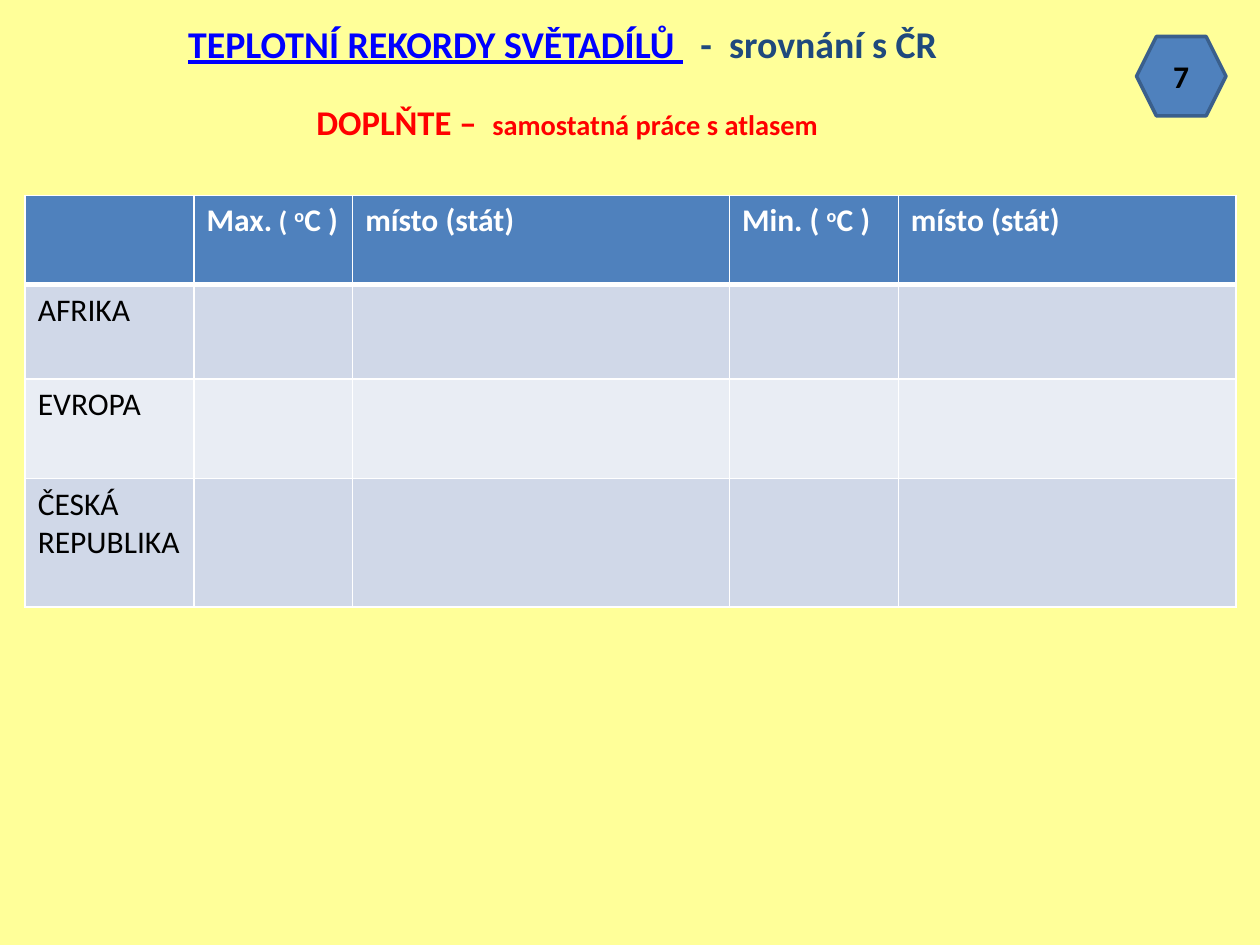
from lxml.etree import SubElement
from pptx import Presentation
from pptx.dml.color import RGBColor
from pptx.enum.shapes import MSO_SHAPE
from pptx.enum.text import MSO_ANCHOR, MSO_AUTO_SIZE, PP_ALIGN
from pptx.oxml import parse_xml
from pptx.oxml.ns import nsdecls, qn
from pptx.util import Inches, Pt

BACKGROUND, BLUE, WHITE, BLACK = "FFFF99", "4F81BD", "FFFFFF", "000000"
BANDS = ["D0D8E8", "E9EDF4"]
TITLE = [
    [("TEPLOTNÍ REKORDY SVĚTADÍLŮ ", 21.6, "0000FF", True),
     (" ", 21.6, "FF0000", False),
     (" -  srovnání s ČR ", 21.6, "1F497D", False)],
    [("DOPLŇTE –", 19.8, "FF0000", False),
     (" ", 39.6, "FF0000", False),
     ("samostatná práce s atlasem", 16.2, "FF0000", False)],
]
HEADERS = [
    [],
    [("Max.", 18, 0), (" (", 16, 0), (" ", 18, 0), ("o", 18, 30), ("C )", 18, 0)],
    [("místo (stát)", 18, 0)],
    [("Min. ( ", 18, 0), ("o", 18, 30), ("C )", 18, 0)],
    [("místo (stát)", 18, 0)],
]
REGIONS = ["AFRIKA", "EVROPA", "ČESKÁ\nREPUBLIKA"]
COLUMN_WIDTHS = [1.34, 1.26, 2.99, 1.34, 2.68]
ROW_HEIGHTS = [0.71, 0.75, 0.79, 1.02]


def paint(fill, color):
    fill.solid()
    fill.fore_color.rgb = RGBColor.from_string(color)


def style(span, size, color, bold=True):
    span.font.name = "Calibri"
    span.font.size = Pt(size)
    span.font.bold = bold
    span.font.color.rgb = RGBColor.from_string(color)


def add_span(para, text, size, color):
    span = para.add_run()
    span.text = text
    style(span, size, color)
    return span


def set_borders(cell, widths):
    properties = cell._tc.get_or_add_tcPr()
    for index, (side, width) in enumerate(widths.items()):
        line = parse_xml(f'<a:ln{side} {nsdecls("a")} w="{Pt(width)}"/>')
        solid = SubElement(line, qn("a:solidFill"))
        SubElement(solid, qn("a:srgbClr"), val=WHITE)
        properties.insert(index, line)


def add_title(page):
    title = page.shapes.title
    title.left, title.top = Inches(0), Inches(0.21)
    title.width, title.height = Inches(9), Inches(0.93)
    frame = title.text_frame
    frame.auto_size = MSO_AUTO_SIZE.NONE
    frame.vertical_anchor = MSO_ANCHOR.MIDDLE
    para = frame.paragraphs[0]
    para.alignment = PP_ALIGN.CENTER
    para.font.size = Pt(21.6)
    for number, line in enumerate(TITLE):
        if number:
            para.add_line_break()
        for text, size, color, underlined in line:
            add_span(para, text, size, color).font.underline = underlined


def add_records_table(page):
    table = page.shapes.add_table(
        len(ROW_HEIGHTS), len(COLUMN_WIDTHS), Inches(0.2), Inches(1.55),
        Inches(sum(COLUMN_WIDTHS)), Inches(sum(ROW_HEIGHTS))).table
    table.first_row = table.horz_banding = False
    for column, width in zip(table.columns, COLUMN_WIDTHS):
        column.width = Inches(width)
    for number, (row, height) in enumerate(zip(table.rows, ROW_HEIGHTS)):
        row.height = Inches(height)
        for cell in row.cells:
            paint(cell.fill, BANDS[(number - 1) % 2] if number else BLUE)
            set_borders(cell, {"L": 1, "R": 1, "T": 3 if number == 1 else 1,
                               "B": 1 if number else 3})
    for cell, parts in zip(table.rows[0].cells, HEADERS):
        para = cell.text_frame.paragraphs[0]
        for text, size, raised in parts:
            span = add_span(para, text, size, WHITE)
            if raised:
                span._r.get_or_add_rPr().set("baseline", str(raised * 1000))
    for number, region in enumerate(REGIONS, 1):
        frame = table.cell(number, 0).text_frame
        frame.text = region
        for para in frame.paragraphs:
            style(para.runs[0], 18, BLACK, bold=False)


def add_number(page):
    badge = page.shapes.add_shape(
        MSO_SHAPE.HEXAGON, Inches(9.02), Inches(0.29), Inches(0.71), Inches(0.63))
    badge.shadow.inherit = False
    paint(badge.fill, BLUE)
    paint(badge.line.fill, "3A5F8C")
    badge.line.width = Pt(2)
    frame = badge.text_frame
    frame.text = "7"
    frame.vertical_anchor = MSO_ANCHOR.MIDDLE
    frame.paragraphs[0].alignment = PP_ALIGN.CENTER
    style(frame.paragraphs[0].runs[0], 18, BLACK)


def main():
    deck = Presentation()
    deck.slide_width, deck.slide_height = Inches(10), Inches(7.5)
    page = deck.slides.add_slide(deck.slide_layouts[5])
    paint(page.background.fill, BACKGROUND)
    add_title(page)
    add_records_table(page)
    add_number(page)
    deck.save("out.pptx")


if __name__ == "__main__":
    main()
